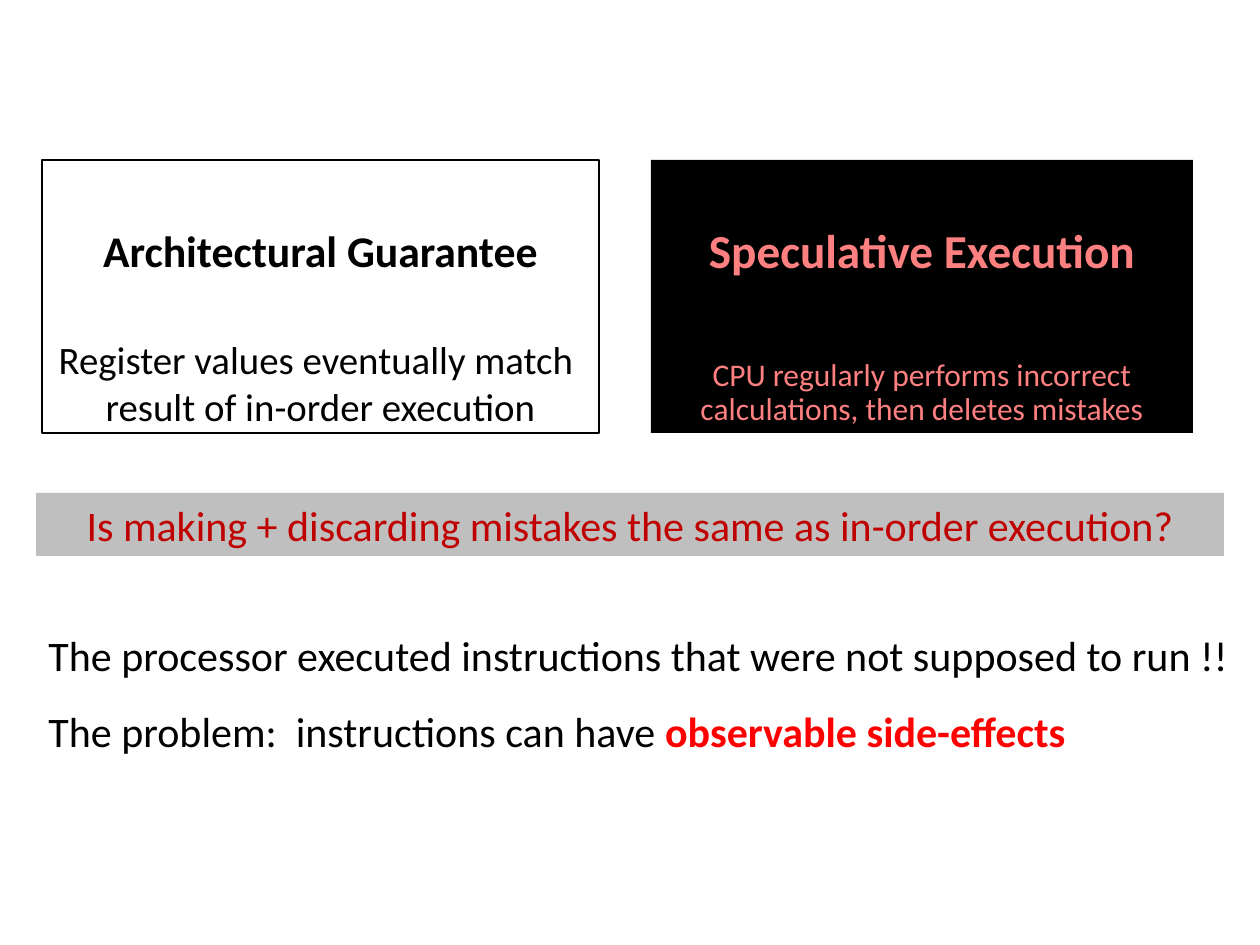
import pptx
import pptx.dml.color
import pptx.enum.shapes
import pptx.enum.text
import pptx.util

PX_PER_INCH = 126
FONT = "Calibri"
BLACK = "000000"


def px(length):
    return pptx.util.Emu(round(length * 914400 / PX_PER_INCH))


def color(hex_code):
    return pptx.dml.color.RGBColor.from_string(hex_code)


def style(font, size, hex_code, bold=False):
    font.name = FONT
    font.size = pptx.util.Pt(size)
    font.bold = bold
    font.color.rgb = color(hex_code)


def add_panel(slide, box, fill=None, outline=None):
    panel = slide.shapes.add_shape(
        pptx.enum.shapes.MSO_SHAPE.RECTANGLE, *map(px, box))
    panel.shadow.inherit = False
    if fill:
        panel.fill.solid()
        panel.fill.fore_color.rgb = color(fill)
    else:
        panel.fill.background()
    if outline:
        panel.line.color.rgb = color(outline)
        panel.line.width = pptx.util.Pt(0.75)
    else:
        panel.line.fill.background()
    panel.text_frame.word_wrap = True
    return panel


def add_card(slide, box, heading, claim, sizes, text_color, top_inset, side_inset,
             gap, line_spacing, fill=None, outline=None):
    frame = add_panel(slide, box, fill, outline).text_frame
    frame.vertical_anchor = pptx.enum.text.MSO_ANCHOR.TOP
    frame.margin_left = frame.margin_right = px(side_inset)
    frame.margin_top = px(top_inset)
    frame.margin_bottom = 0
    frame.text = f"{heading}\n{claim}"
    for paragraph, size, bold in zip(frame.paragraphs, sizes, (True, False)):
        paragraph.alignment = pptx.enum.text.PP_ALIGN.CENTER
        paragraph.line_spacing = line_spacing
        style(paragraph.font, size, text_color, bold)
    frame.paragraphs[1].space_before = pptx.util.Pt(gap)


def add_question(slide, box, question):
    frame = add_panel(slide, box, fill="BFBFBF").text_frame
    frame.vertical_anchor = pptx.enum.text.MSO_ANCHOR.MIDDLE
    frame.text = question
    paragraph = frame.paragraphs[0]
    paragraph.alignment = pptx.enum.text.PP_ALIGN.CENTER
    style(paragraph.font, 24, "C00000")


def add_conclusion(slide, box, observation, problem, emphasis):
    frame = slide.shapes.add_textbox(*map(px, box)).text_frame
    frame.word_wrap = False
    frame.text = f"{observation}\n{problem}"
    for paragraph in frame.paragraphs:
        paragraph.line_spacing = 1.5
        style(paragraph.font, 24, BLACK)
    side_effects = frame.paragraphs[1].add_run()
    side_effects.text = emphasis
    side_effects.font.bold = True
    side_effects.font.color.rgb = color("FF0000")


def main():
    deck = pptx.Presentation()
    deck.slide_width, deck.slide_height = px(1260), px(945)
    slide = deck.slides.add_slide(deck.slide_layouts[6])

    add_card(slide, (651, 160, 542, 273), "Speculative Execution",
             "CPU regularly performs incorrect calculations, then deletes mistakes",
             sizes=(27, 18), text_color="FF8080", top_inset=68, side_inset=0,
             gap=46, line_spacing=0.9, fill=BLACK)
    add_card(slide, (42, 160, 557, 273), "Architectural Guarantee",
             "Register values eventually match \vresult of in-order execution",
             sizes=(25, 22.2), text_color=BLACK, top_inset=64, side_inset=13,
             gap=34, line_spacing=1.0, outline=BLACK)
    add_question(slide, (36, 493, 1188, 63),
                 "Is making + discarding mistakes the same as in-order execution?")
    add_conclusion(slide, (36, 598, 1216, 158),
                   "The processor executed instructions that were not supposed to run !!",
                   "The problem:  instructions can have ", "observable side-effects")

    deck.save("out.pptx")


if __name__ == "__main__":
    main()
